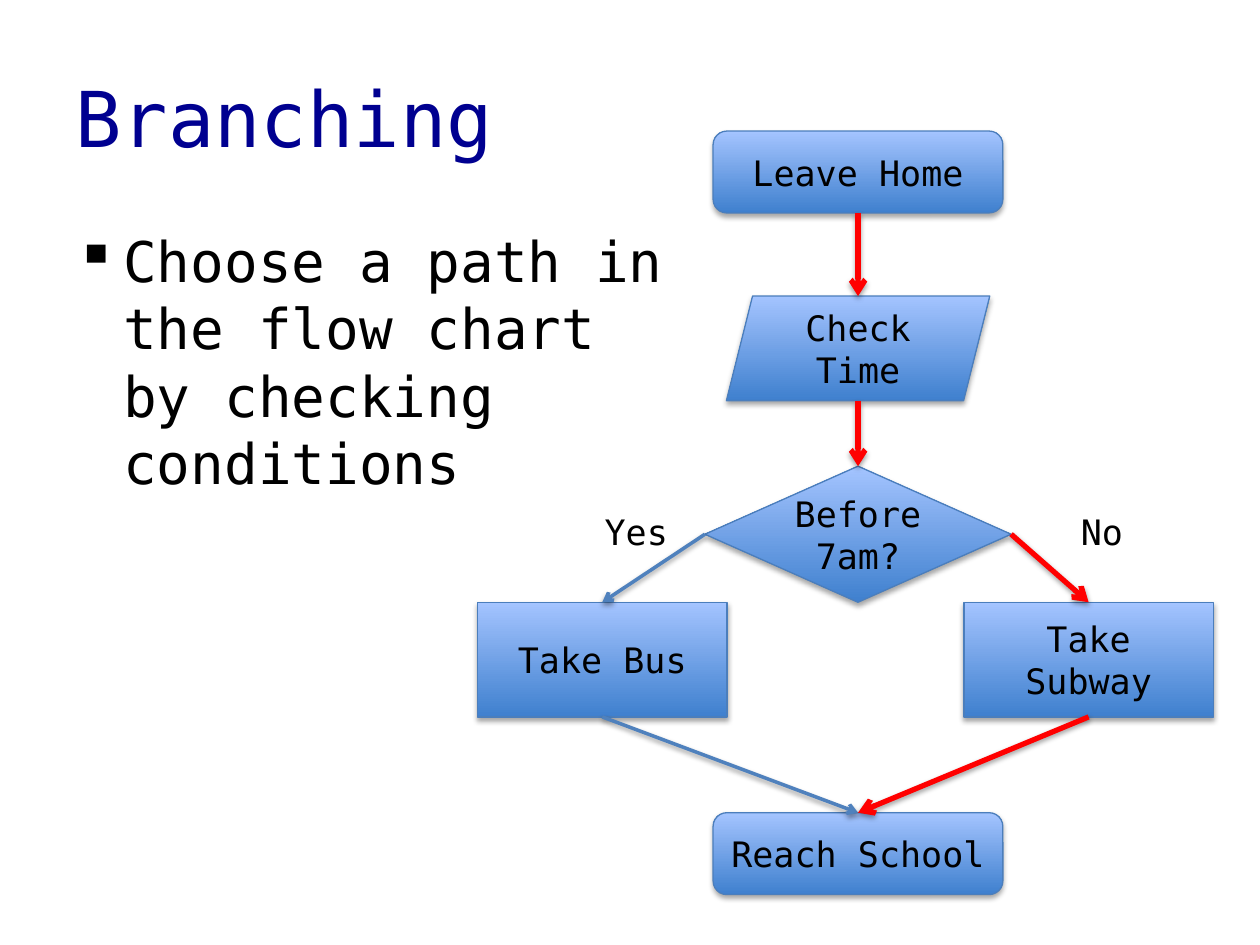
from lxml.etree import SubElement
from pptx import Presentation
from pptx.dml.color import RGBColor
from pptx.enum.shapes import MSO_CONNECTOR, MSO_SHAPE
from pptx.enum.text import MSO_ANCHOR, PP_ALIGN
from pptx.oxml.ns import qn
from pptx.util import Inches, Pt

NAVY = RGBColor(0x00, 0x00, 0x90)
BLACK = RGBColor(0x00, 0x00, 0x00)
RED = RGBColor(0xFF, 0x00, 0x00)
BLUE = RGBColor(0x4F, 0x81, 0xBD)
EDGE = RGBColor(0x4B, 0x7E, 0xBC)
DARK = RGBColor(0x3F, 0x80, 0xCE)
LIGHT = RGBColor(0xA4, 0xC4, 0xFF)
FONT = "DejaVu Sans Mono"


def write(tf, text, size, color, align):
    p = tf.paragraphs[0]
    p.alignment = align
    r = p.add_run()
    r.text = text
    for key, value in {"name": FONT, "size": Pt(size)}.items():
        setattr(r.font, key, value)
    r.font.color.rgb = color
    return p


def add_shadow(s, alpha, dist):
    effects = SubElement(s.element.spPr, qn("a:effectLst"))
    outer = SubElement(effects, qn("a:outerShdw"), blurRad=str(Pt(3.1)),
                       dist=str(Pt(dist)), dir="5400000", rotWithShape="0")
    clr = SubElement(outer, qn("a:srgbClr"), val=str(BLACK))
    SubElement(clr, qn("a:alpha"), val=str(alpha * 1000))


prs = Presentation()
prs.slide_width, prs.slide_height = Inches(10), Inches(7.5)
slide = prs.slides.add_slide(prs.slide_layouts[5])

title = slide.shapes.title
box = {"left": 0.5, "top": 0.3, "width": 9, "height": 1.25}
for key, value in box.items():
    setattr(title, key, Inches(value))
title.text_frame.vertical_anchor = MSO_ANCHOR.MIDDLE
write(title.text_frame, "Branching", 44, NAVY, PP_ALIGN.LEFT)

body = slide.shapes.add_textbox(Inches(0.5), Inches(1.75), Inches(5.12), Inches(4.95))
body.text_frame.word_wrap = True
p = write(body.text_frame, "Choose a path in the flow chart by checking conditions",
          32, BLACK, PP_ALIGN.LEFT)
p.space_before = Pt(12.2)
pPr = p._p.get_or_add_pPr()
pPr.set("marL", str(Inches(0.38)))
pPr.set("indent", str(Inches(-0.38)))
SubElement(pPr, qn("a:buChar"), char="▪")

LEFT, MID, RIGHT = 4.78, 6.81, 8.64
ROWS = [1.04, 2.35, 3.7, 4.78, 6.45]
nodes = [
    ("Leave Home", MSO_SHAPE.ROUNDED_RECTANGLE, MID, ROWS[0], 2.3, 0.65),
    ("Check Time", MSO_SHAPE.PARALLELOGRAM, MID, ROWS[1], 2.09, 0.83),
    ("Before 7am?", MSO_SHAPE.DIAMOND, MID, ROWS[2], 2.43, 1.08),
    ("Take Bus", MSO_SHAPE.RECTANGLE, LEFT, ROWS[3], 1.98, 0.91),
    ("Take Subway", MSO_SHAPE.RECTANGLE, RIGHT, ROWS[3], 1.98, 0.91),
    ("Reach School", MSO_SHAPE.ROUNDED_RECTANGLE, MID, ROWS[4], 2.3, 0.65),
]
sites = {}
for text, kind, cx, top, w, h in nodes:
    s = slide.shapes.add_shape(kind, Inches(cx - w / 2), Inches(top), Inches(w), Inches(h))
    s.fill.gradient()
    s.fill.gradient_angle = 90
    for stop, position, color in zip(s.fill.gradient_stops, (0, 1), (DARK, LIGHT)):
        stop.position = position
        stop.color.rgb = color
    s.line.color.rgb = EDGE
    s.line.width = Pt(0.75)
    add_shadow(s, 35, 1.8)
    s.text_frame.vertical_anchor = MSO_ANCHOR.MIDDLE
    write(s.text_frame, text, 20, BLACK, PP_ALIGN.CENTER)
    sites[text] = {"top": (cx, top), "bottom": (cx, top + h),
                   "left": (cx - w / 2, top + h / 2), "right": (cx + w / 2, top + h / 2)}

arrows = [
    ("Leave Home", "bottom", "Check Time", RED, 3),
    ("Check Time", "bottom", "Before 7am?", RED, 3),
    ("Take Bus", "bottom", "Reach School", BLUE, 2),
    ("Before 7am?", "left", "Take Bus", BLUE, 2),
    ("Before 7am?", "right", "Take Subway", RED, 3),
    ("Take Subway", "bottom", "Reach School", RED, 3),
]
for source, side, target, color, width in arrows:
    ends = sites[source][side] + sites[target]["top"]
    s = slide.shapes.add_connector(MSO_CONNECTOR.STRAIGHT, *map(Inches, ends))
    s.line.color.rgb = color
    s.line.width = Pt(width)
    SubElement(s.element.spPr.find(qn("a:ln")), qn("a:tailEnd"), type="arrow")
    add_shadow(s, 38, 1.6)

for text, left, width in [("Yes", 4.7, 0.71), ("No", 8.48, 0.56)]:
    s = slide.shapes.add_textbox(Inches(left), Inches(4), Inches(width), Inches(0.44))
    s.text_frame.word_wrap = False
    write(s.text_frame, text, 20, BLACK, PP_ALIGN.LEFT)

prs.save("out.pptx")
